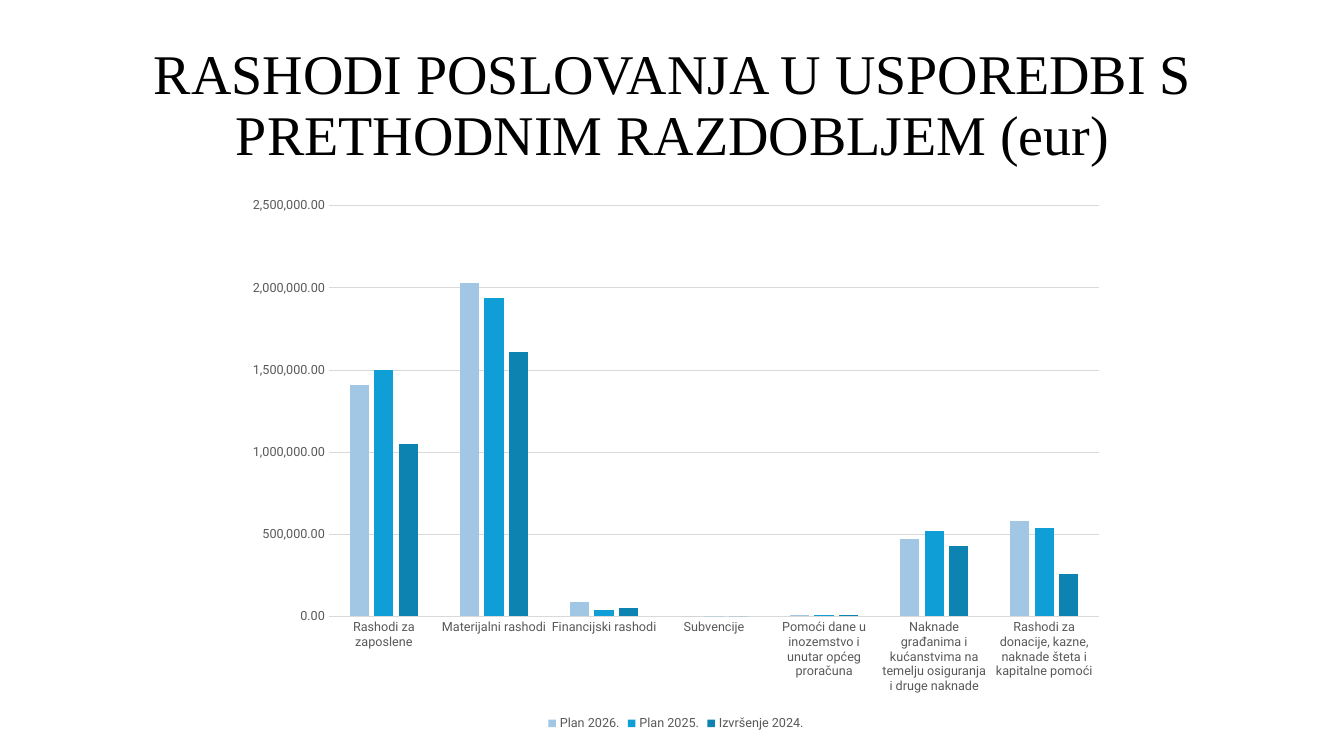
"""Slide comparing operating expenses across three budget years."""
from dataclasses import dataclass

from pptx import Presentation, util as u
from pptx.chart.data import CategoryChartData
from pptx.dml.color import RGBColor
from pptx.enum import chart as ch, text

WIDTH, HEIGHT = u.Inches(13.33), u.Inches(7.5)
TITLE = "RASHODI POSLOVANJA U USPOREDBI S PRETHODNIM RAZDOBLJEM (eur)"
CATEGORIES = [
    "Rashodi za zaposlene",
    "Materijalni rashodi",
    "Financijski rashodi",
    "Subvencije",
    "Pomoći dane u inozemstvo i unutar općeg proračuna",
    "Naknade građanima i kućanstvima na temelju osiguranja i druge naknade",
    "Rashodi za donacije, kazne, naknade šteta i kapitalne pomoći",
]
GREY, RULE = "595959", "D9D9D9"


@dataclass
class Box:
    """Place on the slide, in shares of its width and height."""
    left: float
    top: float
    width: float
    height: float

    def emu(self) -> list[int]:
        """Return left, top, width and height as lengths."""
        return [int(self.left * WIDTH), int(self.top * HEIGHT),
                int(self.width * WIDTH), int(self.height * HEIGHT)]


@dataclass
class Year:
    """One budget year, with amounts in thousands of euros."""
    name: str
    color: str
    thousands: list[int]


TITLE_BOX = Box(0.069, 0.028, 0.863, 0.2)
CHART_BOX = Box(0.175, 0.248, 0.656, 0.724)
YEARS = [
    Year("Plan 2026.", "A2C7E5", [1410, 2030, 90, 0, 10, 470, 580]),
    Year("Plan 2025.", "0F9ED5", [1500, 1940, 40, 0, 10, 520, 540]),
    Year("Izvršenje 2024.", "0C83B1", [1050, 1610, 50, 0, 10, 430, 260]),
]


def rgb(color: str) -> RGBColor:
    """Turn a hex string into a colour."""
    return RGBColor.from_string(color)


def set_font(font, name: str, size: float, color: str) -> None:
    """Set typeface, size in points and colour."""
    font.name, font.size = name, u.Pt(size)
    font.color.rgb = rgb(color)


def set_line(line) -> None:
    """Draw a line as a thin grey rule."""
    line.color.rgb = rgb(RULE)
    line.width = u.Pt(0.75)


def add_title(s) -> None:
    """Add the centred title."""
    tf = s.shapes.add_textbox(*TITLE_BOX.emu()).text_frame
    tf.word_wrap = True
    tf.vertical_anchor = text.MSO_ANCHOR.BOTTOM
    p = tf.paragraphs[0]
    p.text = TITLE
    p.alignment = text.PP_ALIGN.CENTER
    p.line_spacing = 0.9
    set_font(p.font, "Times New Roman", 40, "000000")


def add_expense_chart(s) -> None:
    """Add the clustered columns, one series a year."""
    data = CategoryChartData(number_format="#,##0.00")
    data.categories = CATEGORIES
    for year in YEARS:
        data.add_series(year.name, [v * 1000 for v in year.thousands])
    chart = s.shapes.add_chart(
        ch.XL_CHART_TYPE.COLUMN_CLUSTERED, *CHART_BOX.emu(), data).chart
    set_font(chart.font, "Roboto", 10, "000000")
    chart.has_title = False

    plot = chart.plots[0]
    plot.gap_width, plot.overlap, plot.vary_by_categories = 219, -27, False
    for series, year in zip(plot.series, YEARS):
        series.format.fill.solid()
        series.format.fill.fore_color.rgb = rgb(year.color)
        series.invert_if_negative = False

    for axis in (chart.category_axis, chart.value_axis):
        axis.major_tick_mark = axis.minor_tick_mark = ch.XL_TICK_MARK.NONE
        set_font(axis.tick_labels.font, "Roboto", 9, GREY)
    set_line(chart.category_axis.format.line)
    values = chart.value_axis
    values.minimum_scale, values.maximum_scale = 0, 2_500_000
    values.major_unit = 500_000
    values.tick_labels.number_format = "#,##0.00"
    values.tick_labels.number_format_is_linked = False
    values.format.line.fill.background()
    set_line(values.major_gridlines.format.line)

    chart.has_legend = True
    chart.legend.position = ch.XL_LEGEND_POSITION.BOTTOM
    chart.legend.include_in_layout = False
    set_font(chart.legend.font, "Roboto", 9, GREY)


def main() -> None:
    """Build and save the slide."""
    prs = Presentation()
    prs.slide_width, prs.slide_height = WIDTH, HEIGHT
    s = prs.slides.add_slide(prs.slide_layouts[6])
    add_title(s)
    add_expense_chart(s)
    prs.save("out.pptx")


if __name__ == "__main__":
    main()
